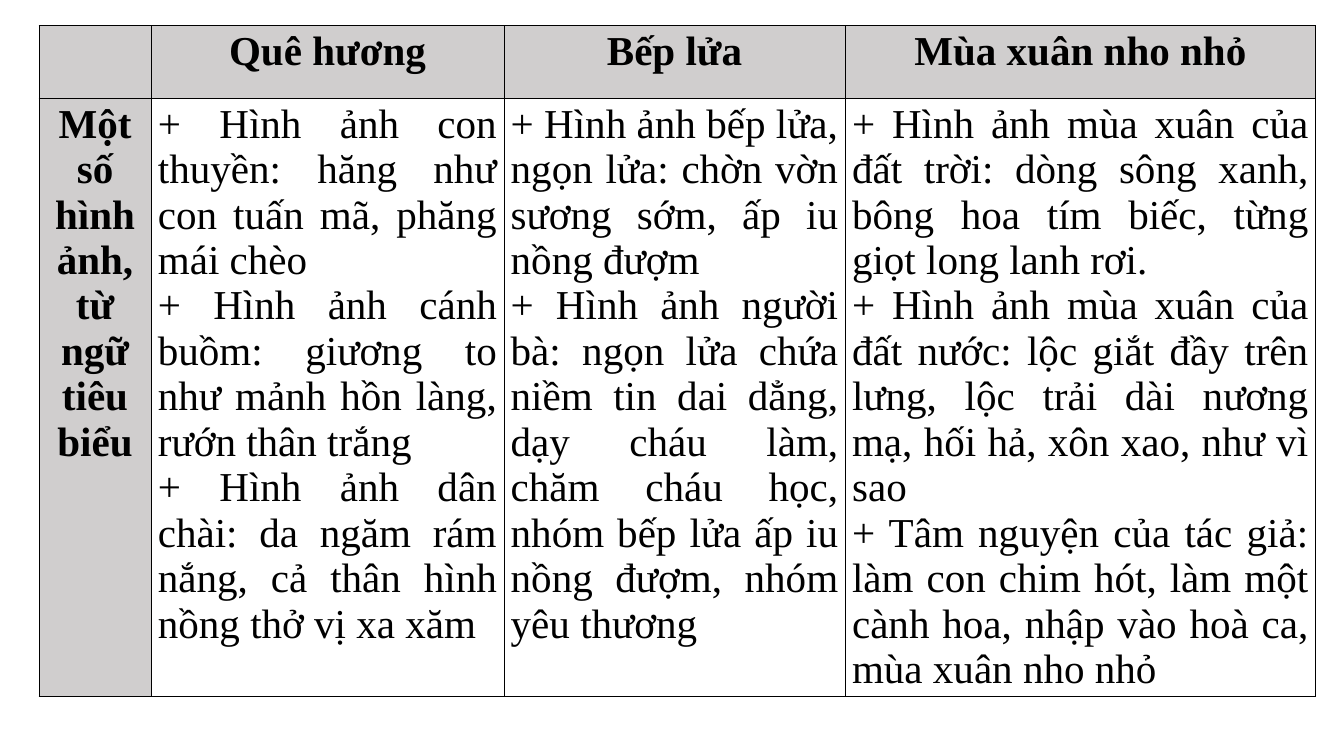
from lxml import etree
from pptx import Presentation
from pptx.dml.color import RGBColor
from pptx.enum.text import PP_ALIGN
from pptx.oxml.ns import qn
from pptx.util import Inches, Pt

CENTER, JUSTIFY = PP_ALIGN.CENTER, PP_ALIGN.JUSTIFY
BLACK = RGBColor(0x00, 0x00, 0x00)
WHITE = RGBColor(0xFF, 0xFF, 0xFF)
GREY = RGBColor(0xD0, 0xCE, 0xCE)

COLUMN_WIDTHS = [1.67, 5.25, 5.08, 7]
ROW_HEIGHTS = [1.08, 8.9]

# Each cell is a list of paragraphs
ROWS = [
    [[], ["Quê hương"], ["Bếp lửa"], ["Mùa xuân nho nhỏ"]],
    [
        ["Một số hình ảnh, từ ngữ tiêu biểu"],
        [
            "+ Hình ảnh con thuyền: hăng như con tuấn mã, phăng mái chèo",
            "+ Hình ảnh cánh buồm: giương to như mảnh hồn làng, rướn thân trắng",
            "+ Hình ảnh dân chài: da ngăm rám nắng, cả thân hình nồng thở vị xa xăm",
        ],
        [
            "+ Hình ảnh bếp lửa, ngọn lửa: chờn vờn sương sớm, ấp iu nồng đượm",
            "+ Hình ảnh người bà: ngọn lửa chứa niềm tin dai dẳng, dạy cháu làm, "
            "chăm cháu học, nhóm bếp lửa ấp iu nồng đượm, nhóm yêu thương",
        ],
        [
            "+ Hình ảnh mùa xuân của đất trời: dòng sông xanh, bông hoa tím biếc, "
            "từng giọt long lanh rơi.",
            "+ Hình ảnh mùa xuân của đất nước: lộc giắt đầy trên lưng, "
            "lộc trải dài nương mạ, hối hả, xôn xao, như vì sao",
            "+ Tâm nguyện của tác giả: làm con chim hót, làm một cành hoa, "
            "nhập vào hoà ca, mùa xuân nho nhỏ",
        ],
    ],
]


def add_borders(cell):
    """Draw a 1 pt black line on all four sides, ahead of the cell's fill."""
    properties = cell._tc.get_or_add_tcPr()
    for index, side in enumerate(["a:lnL", "a:lnR", "a:lnT", "a:lnB"]):
        line = etree.Element(qn(side), w=str(Pt(1)))
        fill = etree.SubElement(line, qn("a:solidFill"))
        etree.SubElement(fill, qn("a:srgbClr"), val=str(BLACK))
        properties.insert(index, line)


deck = Presentation()
deck.slide_width = Inches(20)
deck.slide_height = Inches(11.25)
page = deck.slides.add_slide(deck.slide_layouts[6])

# Comparison table
table = page.shapes.add_table(
    len(ROW_HEIGHTS), len(COLUMN_WIDTHS), Inches(0.58), Inches(0.38),
    Inches(sum(COLUMN_WIDTHS)), Inches(sum(ROW_HEIGHTS))).table
for column, width in zip(table.columns, COLUMN_WIDTHS):
    column.width = Inches(width)
for row, height in zip(table.rows, ROW_HEIGHTS):
    row.height = Inches(height)

# Cells: the first row and the first column are headings
for row_index, row_texts in enumerate(ROWS):
    for column_index, texts in enumerate(row_texts):
        cell = table.cell(row_index, column_index)
        heading = row_index == 0 or column_index == 0
        cell.fill.solid()
        cell.fill.fore_color.rgb = GREY if heading else WHITE
        add_borders(cell)
        cell.text = "\n".join(texts)
        for para in cell.text_frame.paragraphs:
            para.alignment = CENTER if heading else JUSTIFY
            para.font.name = "Times New Roman"
            para.font.size = Pt(44)
            para.font.bold = heading
            para.font.color.rgb = BLACK

deck.save("out.pptx")
